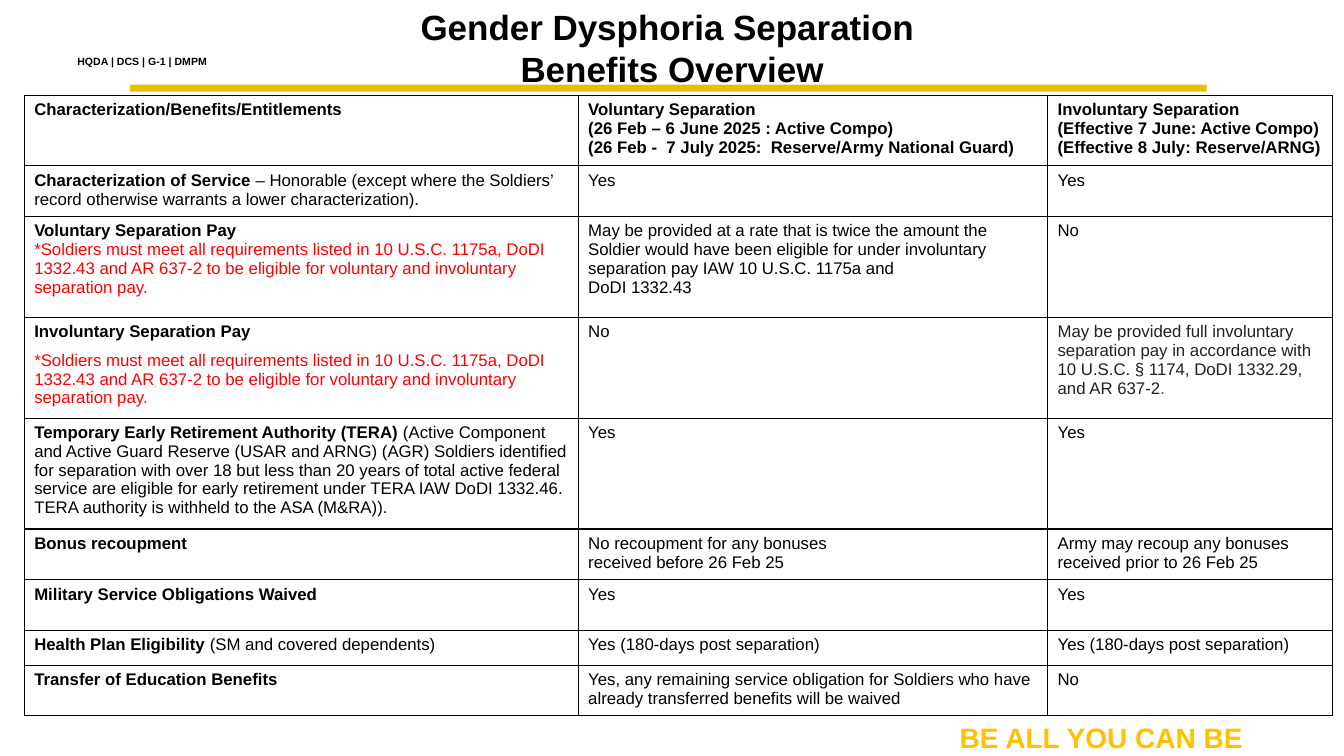
from lxml.etree import SubElement
from pptx import Presentation
from pptx.dml.color import RGBColor
from pptx.enum.shapes import MSO_SHAPE
from pptx.enum.text import MSO_ANCHOR, MSO_AUTO_SIZE, PP_ALIGN
from pptx.oxml.ns import qn
from pptx.util import Pt

COLORS = {
    "black": "000000", "white": "FFFFFF", "red": "FF0000", "charcoal": "212121",
    "gray": "494949", "bar": "EABD00", "gold": "FFC002",
}
# Text styles of the table: bold, colour
STYLES = {
    "bold": (True, "black"), "plain": (False, "black"), "red": (False, "red"),
    "charcoal": (False, "charcoal"), "gray": (False, "gray"),
}


def color(name):
    return RGBColor.from_string(COLORS[name])


class SlideBuilder:
    font_name = "Arial"

    def __init__(self, presentation):
        self.slide = presentation.slides.add_slide(presentation.slide_layouts[5])

    def style(self, font, size, bold, color_name):
        font.name, font.size, font.bold = self.font_name, Pt(size), bold
        font.color.rgb = color(color_name)

    def title(self, lines, box, size, spacing):
        title = self.slide.shapes.title
        title.left, title.top, title.width, title.height = map(Pt, box)
        frame = title.text_frame
        frame.word_wrap = True
        frame.auto_size = MSO_AUTO_SIZE.NONE
        frame.vertical_anchor = MSO_ANCHOR.TOP
        frame.text = "\n".join(lines)
        for paragraph in frame.paragraphs:
            paragraph.alignment = PP_ALIGN.CENTER
            paragraph.line_spacing = Pt(spacing)
            paragraph.space_before = Pt(0)
            self.style(paragraph.font, size, True, "black")

    def bar(self, box, fill):
        shape = self.slide.shapes.add_shape(MSO_SHAPE.RECTANGLE, *map(Pt, box))
        shape.shadow.inherit = False
        shape.fill.solid()
        shape.fill.fore_color.rgb = color(fill)
        shape.line.fill.background()

    def label(self, text, box, size, color_name, anchor, inset):
        frame = self.slide.shapes.add_textbox(*map(Pt, box)).text_frame
        frame.word_wrap = True
        frame.vertical_anchor = anchor
        frame.margin_left = frame.margin_right = Pt(inset)
        frame.margin_top = frame.margin_bottom = Pt(inset / 2)
        paragraph = frame.paragraphs[0]
        paragraph.text = text
        self.style(paragraph.font, size, True, color_name)

    def table(self, rows, left, top, widths, heights, size):
        table = self.slide.shapes.add_table(
            len(rows), len(widths), Pt(left), Pt(top), Pt(sum(widths)), Pt(sum(heights))
        ).table
        table.first_row = table.horz_banding = False
        for column, width in zip(table.columns, widths):
            column.width = Pt(width)
        for row, height in zip(table.rows, heights):
            row.height = Pt(height)
        for row, contents in zip(table.rows, rows):
            for cell, content in zip(row.cells, contents):
                self.cell(cell, content, size)

    def cell(self, cell, content, size):
        self.borders(cell)
        cell.fill.solid()
        cell.fill.fore_color.rgb = color("white")
        frame = cell.text_frame
        for index, item in enumerate(content):
            paragraph = frame.add_paragraph() if index else frame.paragraphs[0]
            runs, space_before = item
            if space_before:
                paragraph.space_before = Pt(space_before)
            self.style(paragraph.font, size, *STYLES[runs[0][0]])
            for style, text in runs:
                run = paragraph.add_run()
                run.text = text
                if style != runs[0][0]:
                    run.font.bold = STYLES[style][0]
                    run.font.color.rgb = color(STYLES[style][1])

    def borders(self, cell):
        properties = cell._tc.get_or_add_tcPr()
        for side in ("a:lnL", "a:lnR", "a:lnT", "a:lnB"):
            line = SubElement(properties, qn(side), w=str(Pt(1)))
            fill = SubElement(line, qn("a:solidFill"))
            SubElement(fill, qn("a:srgbClr"), val=COLORS["black"])


def mixed(*runs, space_before=0):
    """One paragraph made of (style, text) runs."""
    return runs, space_before


def lines(style, *texts):
    """A cell with one paragraph per text, all in one style."""
    return [mixed((style, text)) for text in texts]


YES, NO = lines("plain", "Yes"), lines("plain", "No")
HEALTH_PLAN = lines("plain", "Yes (180-days post separation)")
PAY_RULE = (
    "red",
    "*Soldiers must meet all requirements listed in 10 U.S.C. 1175a, DoDI 1332.43 and "
    "AR 637-2 to be eligible for voluntary and involuntary separation pay.",
)

BENEFITS = [
    (
        lines("bold", "Characterization/Benefits/Entitlements"),
        lines("bold", "Voluntary Separation", "(26 Feb – 6 June 2025 : Active Compo)",
              "(26 Feb -  7 July 2025:  Reserve/Army National Guard)"),
        lines("bold", "Involuntary Separation", "(Effective 7 June: Active Compo)",
              "(Effective 8 July: Reserve/ARNG)"),
    ),
    (
        [mixed(("bold", "Characterization of Service "),
               ("plain", "– Honorable (except where the Soldiers’ record otherwise "
                         "warrants a lower characterization)."))],
        YES, YES,
    ),
    (
        [mixed(("bold", "Voluntary Separation Pay")), mixed(PAY_RULE)],
        lines("plain",
              "May be provided at a rate that is twice the amount the Soldier would have "
              "been eligible for under involuntary separation pay IAW 10 U.S.C. 1175a and",
              "DoDI 1332.43"),
        NO,
    ),
    (
        [mixed(("bold", "Involuntary Separation Pay")), mixed(PAY_RULE, space_before=7)],
        NO,
        [mixed(("charcoal", "May be provided full involuntary separation pay in accordance "
                            "with 10 U.S.C. § 1174, DoDI 1332.29, and AR 637-2"),
               ("gray", "."))],
    ),
    (
        [mixed(("bold", "Temporary Early Retirement Authority (TERA)"),
               ("plain", " (Active Component and Active Guard Reserve (USAR and ARNG) (AGR) "
                         "Soldiers identified for separation with over 18 but less than 20 "
                         "years of total active federal service are eligible for early "
                         "retirement under TERA IAW DoDI 1332.46. TERA authority is withheld "
                         "to the ASA (M&RA))."))],
        YES, YES,
    ),
    (
        lines("bold", "Bonus recoupment"),
        lines("plain", "No recoupment for any bonuses", "received before 26 Feb 25"),
        lines("plain", "Army may recoup any bonuses received prior to 26 Feb 25"),
    ),
    (lines("bold", "Military Service Obligations Waived"), YES, YES),
    (
        [mixed(("bold", "Health Plan Eligibility"), ("plain", " (SM and covered dependents)"))],
        HEALTH_PLAN, HEALTH_PLAN,
    ),
    (
        lines("bold", "Transfer of Education Benefits"),
        lines("plain", "Yes, any remaining service obligation for Soldiers who have already "
                       "transferred benefits will be waived"),
        NO,
    ),
]


def main():
    presentation = Presentation()
    presentation.slide_width, presentation.slide_height = Pt(960), Pt(540)
    builder = SlideBuilder(presentation)

    # Header
    builder.title(["Gender Dysphoria Separation ", "Benefits Overview"],
                  (0, 0, 960, 67.7), 25, 30)
    builder.bar((92.9, 60.5, 769, 5), "bar")
    builder.label("HQDA | DCS | G-1 | DMPM", (48.2, 35.3, 112.3, 16.6), 7.5, "black",
                  MSO_ANCHOR.MIDDLE, 7.2)

    # Benefits by kind of separation
    builder.table(BENEFITS, 17.3, 68, (395.7, 335.3, 203.6),
                  (50.5, 36.2, 72, 72, 78.8, 36.2, 36, 25, 36.2), 12)

    # Motto
    builder.label("BE ALL YOU CAN BE", (685.5, 514.8, 212, 23), 20, "gold",
                  MSO_ANCHOR.TOP, 0)
    presentation.save("out.pptx")


if __name__ == "__main__":
    main()
